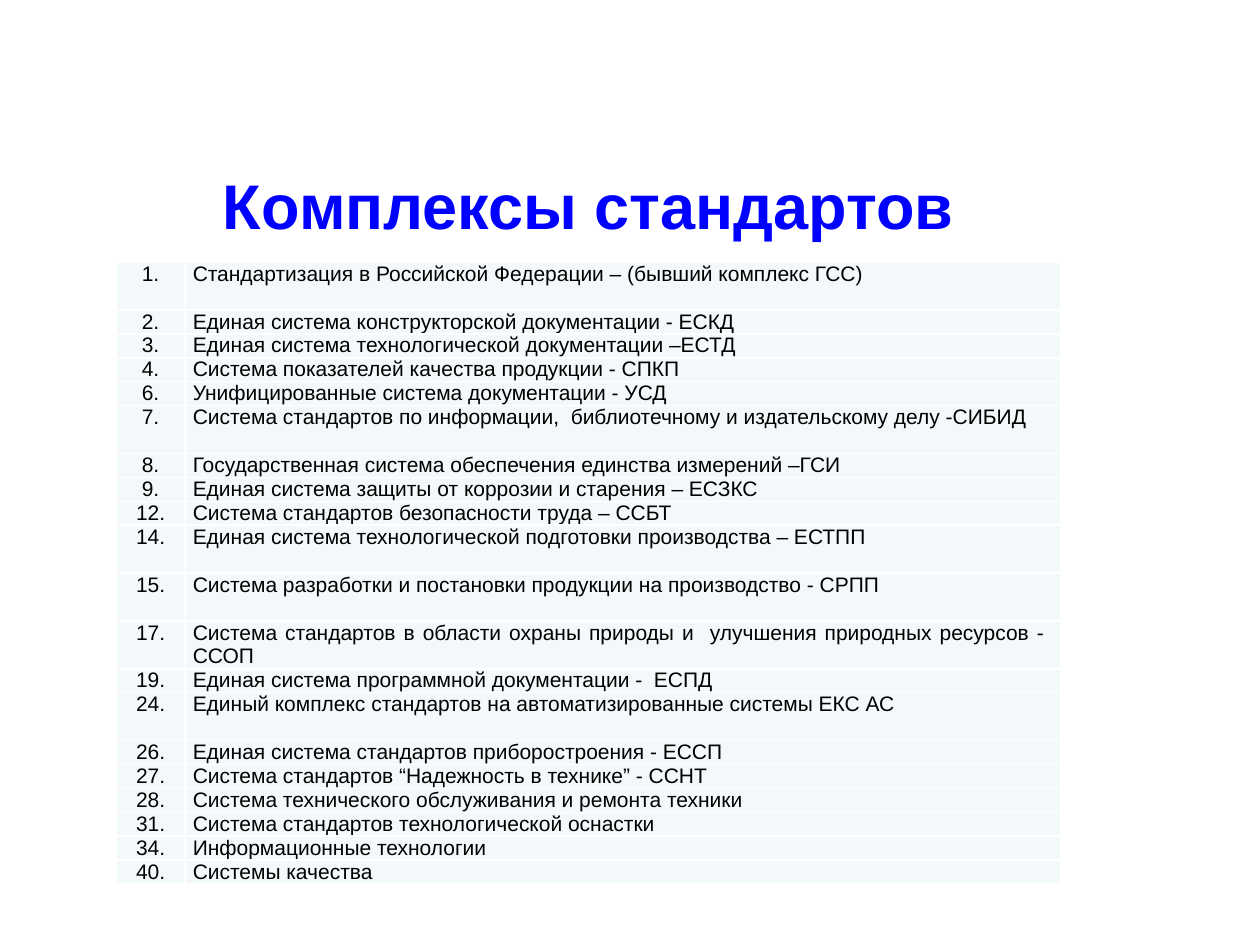
import pptx
import pptx.dml.color
import pptx.enum.text
import pptx.oxml.ns
import pptx.util
from lxml import etree
from pptx.util import Inches

BLUE = pptx.dml.color.RGBColor(0x00, 0x00, 0xFF)
BLACK = pptx.dml.color.RGBColor(0x00, 0x00, 0x00)
WHITE = pptx.dml.color.RGBColor(0xFF, 0xFF, 0xFF)
PALE = pptx.dml.color.RGBColor(0xF3, 0xF9, 0xFA)
FONT = "Arial"
ALIGN = pptx.enum.text.PP_ALIGN
ANCHOR = pptx.enum.text.MSO_ANCHOR

# Number, name and height in lines of each set of standards
STANDARDS = [
    ("1.", "Стандартизация в Российской Федерации – (бывший комплекс ГСС)", 2),
    ("2.", "Единая система конструкторской документации - ЕСКД", 1),
    ("3.", "Единая система технологической документации –ЕСТД", 1),
    ("4.", "Система показателей качества продукции - СПКП", 1),
    ("6.", "Унифицированные система документации - УСД", 1),
    ("7.", "Система стандартов по информации,  библиотечному и издательскому делу -СИБИД", 2),
    ("8.", "Государственная система обеспечения единства измерений –ГСИ", 1),
    ("9.", "Единая система защиты от коррозии и старения – ЕСЗКС", 1),
    ("12.", "Система стандартов безопасности труда – ССБТ", 1),
    ("14.", "Единая система технологической подготовки производства – ЕСТПП", 2),
    ("15.", "Система разработки и постановки продукции на производство - СРПП", 2),
    ("17.", "Система стандартов в области охраны природы и  улучшения природных ресурсов -  ССОП", 2),
    ("19.", "Единая система программной документации -  ЕСПД", 1),
    ("24.", "Единый комплекс стандартов на автоматизированные системы ЕКС АС", 2),
    ("26.", "Единая система стандартов приборостроения - ЕССП", 1),
    ("27.", "Система стандартов “Надежность в технике” - ССНТ", 1),
    ("28.", "Система технического обслуживания и ремонта техники", 1),
    ("31.", "Система стандартов технологической оснастки", 1),
    ("34.", "Информационные технологии", 1),
    ("40.", "Системы качества", 1),
]
LINE_HEIGHT = 0.19
NUMBER_WIDTH = 0.55


def add_span(para, text, size, color, align, bold=False):
    para.alignment = align
    span = para.add_run()
    span.text = text
    span.font.name = FONT
    span.font.size = pptx.util.Pt(size)
    span.font.bold = bold
    span.font.color.rgb = color


def place_title(page, left, top, width, height):
    title = page.shapes.title
    title.left, title.top = Inches(left), Inches(top)
    title.width, title.height = Inches(width), Inches(height)
    frame = title.text_frame
    frame.word_wrap = True
    frame.auto_size = pptx.enum.text.MSO_AUTO_SIZE.NONE
    frame.vertical_anchor = ANCHOR.MIDDLE
    add_span(frame.paragraphs[0], "Комплексы стандартов", 36, BLUE, ALIGN.CENTER, bold=True)


def add_borders(cell, color, points):
    properties = cell._tc.get_or_add_tcPr()
    qn = pptx.oxml.ns.qn
    for side in ("a:lnL", "a:lnR", "a:lnT", "a:lnB"):
        line = etree.SubElement(properties, qn(side), w=str(pptx.util.Pt(points)))
        fill = etree.SubElement(line, qn("a:solidFill"))
        etree.SubElement(fill, qn("a:srgbClr"), val=str(color))


def fill_cell(cell, text, align):
    cell.margin_left = cell.margin_right = Inches(0.06)
    cell.margin_top = cell.margin_bottom = 0
    cell.vertical_anchor = ANCHOR.TOP
    add_borders(cell, WHITE, 1)
    cell.fill.solid()
    cell.fill.fore_color.rgb = PALE
    add_span(cell.text_frame.paragraphs[0], text, 12, BLACK, align)


def place_standards(page, left, top, width):
    height = LINE_HEIGHT * sum(lines for _, _, lines in STANDARDS)
    table = page.shapes.add_table(
        len(STANDARDS), 2, Inches(left), Inches(top), Inches(width), Inches(height)
    ).table
    table.first_row = table.horz_banding = False
    table.columns[0].width = Inches(NUMBER_WIDTH)
    table.columns[1].width = Inches(width - NUMBER_WIDTH)
    for row, (number, name, lines) in zip(table.rows, STANDARDS):
        row.height = Inches(LINE_HEIGHT * lines)
        fill_cell(row.cells[0], number, ALIGN.CENTER)
        fill_cell(row.cells[1], name, ALIGN.JUSTIFY)


def main():
    deck = pptx.Presentation()
    deck.slide_width, deck.slide_height = Inches(10), Inches(7.5)
    page = deck.slides.add_slide(deck.slide_layouts[5])  # title only
    page.background.fill.solid()
    page.background.fill.fore_color.rgb = WHITE
    place_title(page, 1.29, 1.32, 6.76, 0.6)
    place_standards(page, 0.92, 2.08, 7.5)
    deck.save("out.pptx")


if __name__ == "__main__":
    main()
